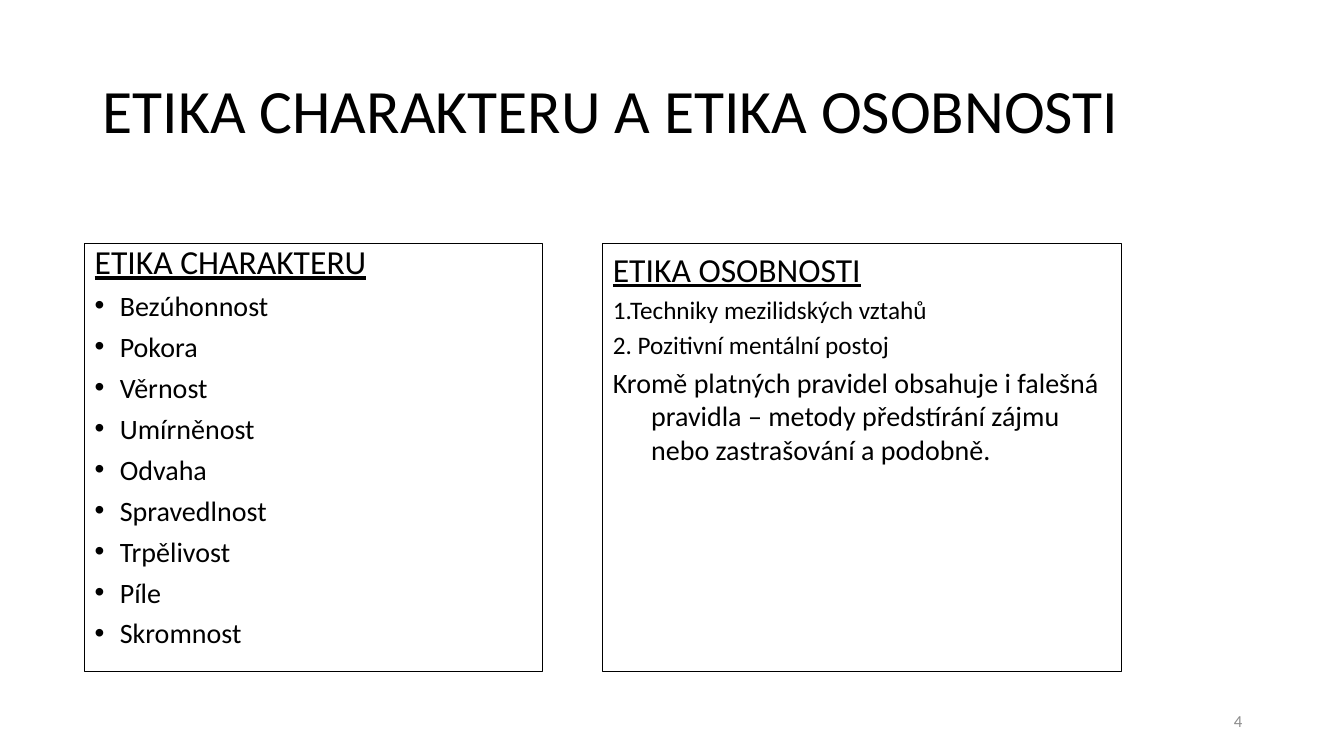
from dataclasses import dataclass

from lxml.etree import SubElement
from pptx import Presentation
from pptx.dml.color import RGBColor
from pptx.enum.shapes import MSO_SHAPE
from pptx.enum.text import MSO_ANCHOR, PP_ALIGN
from pptx.oxml.ns import qn
from pptx.util import Inches, Pt


@dataclass(frozen=True)
class Theme:
    font: str = "Calibri"
    ink: RGBColor = RGBColor(0, 0, 0)
    paper: RGBColor = RGBColor(255, 255, 255)
    muted: RGBColor = RGBColor(0x8C, 0x8C, 0x8C)
    title: int = 44
    heading: int = 24
    body: int = 20
    detail: int = 18
    footer: int = 12


theme = Theme()


def write(para, text, size, color=theme.ink):
    para.text = text
    span = para.runs[0]
    span.font.name = theme.font
    span.font.size = Pt(size)
    span.font.color.rgb = color
    return span


def set_hanging_indent(para, indent, bullet=None):
    properties = para._p.get_or_add_pPr()
    properties.set("marL", str(Inches(indent)))
    properties.set("indent", str(-Inches(indent)))
    if bullet:
        SubElement(properties, qn("a:buFont"), typeface="Arial")
        SubElement(properties, qn("a:buChar"), char=bullet)


deck = Presentation()
deck.slide_width = Inches(13.33)
deck.slide_height = Inches(7.5)
page = deck.slides.add_slide(deck.slide_layouts[6])

# Title and page number
labels = [
    ("ETIKA CHARAKTERU A ETIKA OSOBNOSTI", (0.92, 0.4, 11.5, 1.45),
     theme.title, theme.ink, PP_ALIGN.LEFT, 0.9),
    ("4", (9.42, 6.95, 3, 0.4),
     theme.footer, theme.muted, PP_ALIGN.RIGHT, 1.0),
]
for text, place, size, color, alignment, line_spacing in labels:
    box = page.shapes.add_textbox(*map(Inches, place))
    box.text_frame.word_wrap = True
    box.text_frame.vertical_anchor = MSO_ANCHOR.MIDDLE
    para = box.text_frame.paragraphs[0]
    write(para, text, size, color)
    para.alignment = alignment
    para.line_spacing = line_spacing

# Two framed columns
virtues = ["Bezúhonnost", "Pokora", "Věrnost", "Umírněnost", "Odvaha",
           "Spravedlnost", "Trpělivost", "Píle", "Skromnost"]
techniques = [
    ("1.Techniky mezilidských vztahů", theme.detail),
    ("2. Pozitivní mentální postoj", theme.detail),
    ("Kromě platných pravidel obsahuje i falešná pravidla – metody "
     "předstírání zájmu nebo zastrašování a podobně.", theme.body),
]
columns = [
    dict(left=0.84, width=4.54, heading="ETIKA CHARAKTERU",
         items=[(virtue, theme.body) for virtue in virtues],
         indent=0.25, bullet="•", line_spacing=0.8, gap=10),
    dict(left=5.98, width=5.14, heading="ETIKA OSOBNOSTI",
         items=techniques,
         indent=0.38, bullet=None, line_spacing=1.0, gap=None),
]
for column in columns:
    box = page.shapes.add_shape(
        MSO_SHAPE.RECTANGLE, Inches(column["left"]), Inches(2.42),
        Inches(column["width"]), Inches(4.24))
    box.shadow.inherit = False
    box.fill.solid()
    box.fill.fore_color.rgb = theme.paper
    box.line.color.rgb = theme.ink
    box.line.width = Pt(0.75)
    frame = box.text_frame
    frame.word_wrap = True
    frame.vertical_anchor = MSO_ANCHOR.TOP

    rows = [(column["heading"], theme.heading), *column["items"]]
    for index, (text, size) in enumerate(rows):
        para = frame.add_paragraph() if index else frame.paragraphs[0]
        span = write(para, text, size)
        span.font.underline = index == 0
        para.alignment = PP_ALIGN.LEFT
        para.line_spacing = column["line_spacing"]
        para.space_before = Pt(column["gap"] or 0.2 * size)
        set_hanging_indent(para, column["indent"],
                           column["bullet"] if index else None)

deck.save("out.pptx")
